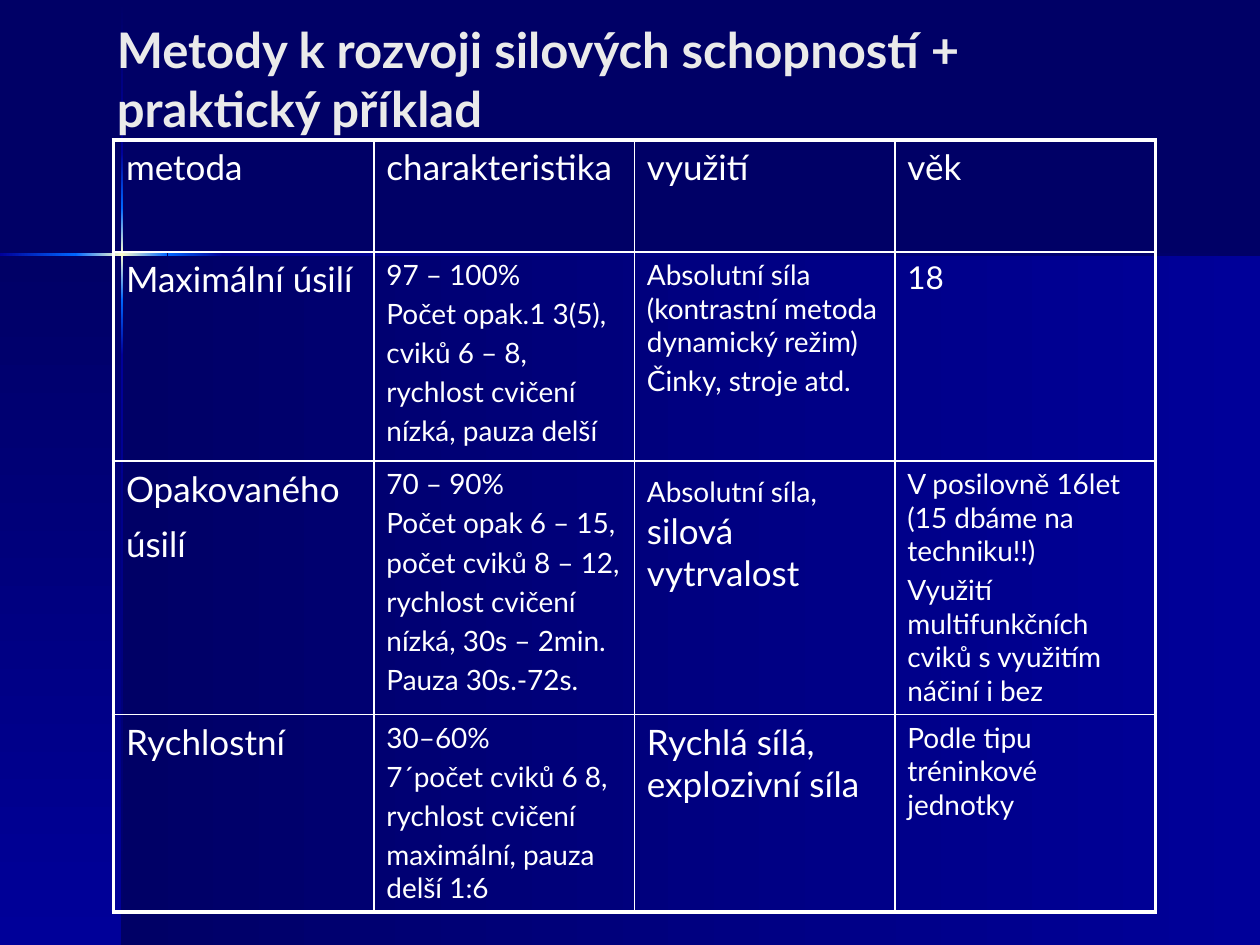
from copy import deepcopy
from dataclasses import dataclass
from itertools import pairwise

from lxml.etree import SubElement
from pptx import Presentation
from pptx.dml.color import RGBColor as RGB
from pptx.enum.shapes import MSO_SHAPE as Shape
from pptx.enum.text import MSO_ANCHOR as Anchor
from pptx.oxml.ns import qn
from pptx.util import Inches, Pt

COLORS = {
    "dark": "000066",
    "mid": "000099",
    "glow": "0066FF",
    "spark": "FFFFCC",
    "title": "EAEAEA",
    "white": "FFFFFF",
}
FONT = "Lato"
THIN, THICK = 1, 2.25


@dataclass
class Band:
    left: float
    top: float
    width: float
    height: float
    stops: tuple[str, ...]
    down: bool = False


@dataclass
class Run:
    text: str
    size: float


@dataclass
class Cell:
    paras: list[list[Run]]


def plain(size: float, *lines: str) -> Cell:
    """Make a cell with one run of the same size in each paragraph."""
    return Cell([[Run(line, size)] for line in lines])


def color(name: str) -> RGB:
    return RGB.from_string(COLORS[name])


def draw_band(slide, band: Band) -> None:
    box = (band.left, band.top, band.width, band.height)
    shape = slide.shapes.add_shape(Shape.RECTANGLE, *map(Inches, box))
    shape.shadow.inherit = False
    shape.line.fill.background()
    fill = shape.fill
    fill.gradient()
    if band.down:
        fill.gradient_angle = 270
    else:
        fill.gradient_angle = 0
    stops = shape._element.spPr.find(qn("a:gradFill")).find(qn("a:gsLst"))
    while len(stops) < len(band.stops):
        stops.append(deepcopy(stops[-1]))
    for i, (stop, name) in enumerate(zip(fill.gradient_stops, band.stops)):
        stop.position = i / (len(band.stops) - 1)
        stop.color.rgb = color(name)


def add_run(para, run: Run, name: str, bold: bool = False) -> None:
    item = para.add_run()
    item.text = run.text
    font = item.font
    font.name, font.size, font.bold = FONT, Pt(run.size), bold
    font.color.rgb = color(name)


def draw_title(slide, text: str) -> None:
    box = slide.shapes.add_textbox(Inches(0.83), 0, Inches(8.17), Inches(1.14))
    frame = box.text_frame
    frame.word_wrap = True
    frame.vertical_anchor = Anchor.BOTTOM
    add_run(frame.paragraphs[0], Run(text, 28), "title", bold=True)


def set_edges(cell, widths: dict[str, float]) -> None:
    """Line the cell; the edges must come before its fill in the XML."""
    props = cell._tc.get_or_add_tcPr()
    for i, (side, width) in enumerate(widths.items()):
        line = SubElement(props, qn(f"a:ln{side}"), w=str(Pt(width)))
        solid = SubElement(line, qn("a:solidFill"))
        SubElement(solid, qn("a:srgbClr"), val=COLORS["white"])
        props.insert(i, line)


def fill_cell(cell, data: Cell) -> None:
    cell.fill.background()
    frame = cell.text_frame
    for i, runs in enumerate(data.paras):
        para = frame.add_paragraph() if i else frame.paragraphs[0]
        para.space_before = Pt(0.2 * runs[0].size)
        for run in runs:
            add_run(para, run, "white")


def draw_table(slide, rows: list[list[Cell]], heights: list[float]) -> None:
    last_row, last_col = len(rows) - 1, len(rows[0]) - 1
    table = slide.shapes.add_table(
        len(rows), len(rows[0]), Inches(0.9), Inches(1.11),
        Inches(8.27), Inches(sum(heights)),
    ).table
    table.first_row = table.horz_banding = False
    for r, (row, height) in enumerate(zip(rows, heights)):
        table.rows[r].height = Inches(height)
        for c, data in enumerate(row):
            cell = table.cell(r, c)
            fill_cell(cell, data)
            outer = {"L": c == 0, "R": c == last_col,
                     "T": r == 0, "B": r == last_row}
            set_edges(cell, {side: THICK if out else THIN
                             for side, out in outer.items()})


PANELS = [
    Band(0.97, 2.02, 9.03, 5.48, ("dark", "mid")),
    Band(0, 2.02, 0.97, 5.48, ("dark", "mid"), down=True),
]
BEAM = [
    ("dark", "mid"),
    ("mid", "glow"),
    ("glow", "spark", "glow"),
    ("glow", "mid"),
    ("mid", "dark"),
]
DOWN = [0.01, 1.21, 1.65, 2.38, 2.82, 7.5]
ACROSS = [0, 0.6, 1.33, 1.77, 10]
BEAMS = [
    Band(0.96, a, 0.02, b - a, stops, down=True)
    for (a, b), stops in zip(pairwise(DOWN), BEAM)
] + [
    Band(a, 2.01, b - a, 0.02, stops)
    for (a, b), stops in zip(pairwise(ACROSS), BEAM[1:])
]

HEIGHTS = [0.89, 1.66, 2, 1.56]
ROWS = [
    [plain(20, head) for head in ("metoda", "charakteristika", "využití", "věk")],
    [
        plain(20, "Maximální úsilí"),
        plain(16, "97 – 100%", "Počet opak.1 3(5),", "cviků 6 – 8,",
              "rychlost cvičení", "nízká, pauza delší"),
        plain(16, "Absolutní síla (kontrastní metoda dynamický režim)",
              "Činky, stroje atd."),
        plain(18, "18"),
    ],
    [
        Cell([[Run("Opakovaného úsilí", 20), Run(" ", 28)]]),
        plain(16, "70 – 90%", "Počet opak 6 – 15,", "počet cviků 8 – 12,",
              "rychlost cvičení", "nízká, 30s – 2min.", "Pauza 30s.-72s."),
        Cell([[Run("Absolutní síla,", 16), Run(" silová vytrvalost", 20)]]),
        plain(16, "V posilovně 16let (15 dbáme na techniku!!)",
              "Využití multifunkčních cviků s využitím náčiní i bez"),
    ],
    [
        plain(20, "Rychlostní"),
        plain(16, "30–60%", "7´počet cviků 6 8,", "rychlost cvičení",
              "maximální, pauza delší 1:6"),
        plain(20, "Rychlá sílá, explozivní síla"),
        plain(16, "Podle tipu tréninkové jednotky"),
    ],
]


def main() -> None:
    deck = Presentation()
    deck.slide_width, deck.slide_height = Inches(10), Inches(7.5)
    slide = deck.slides.add_slide(deck.slide_layouts[6])
    back = slide.background.fill
    back.solid()
    back.fore_color.rgb = color("dark")
    for band in PANELS + BEAMS:
        draw_band(slide, band)
    draw_title(slide, "Metody k rozvoji silových schopností + praktický příklad")
    draw_table(slide, ROWS, HEIGHTS)
    deck.save("out.pptx")


if __name__ == "__main__":
    main()
